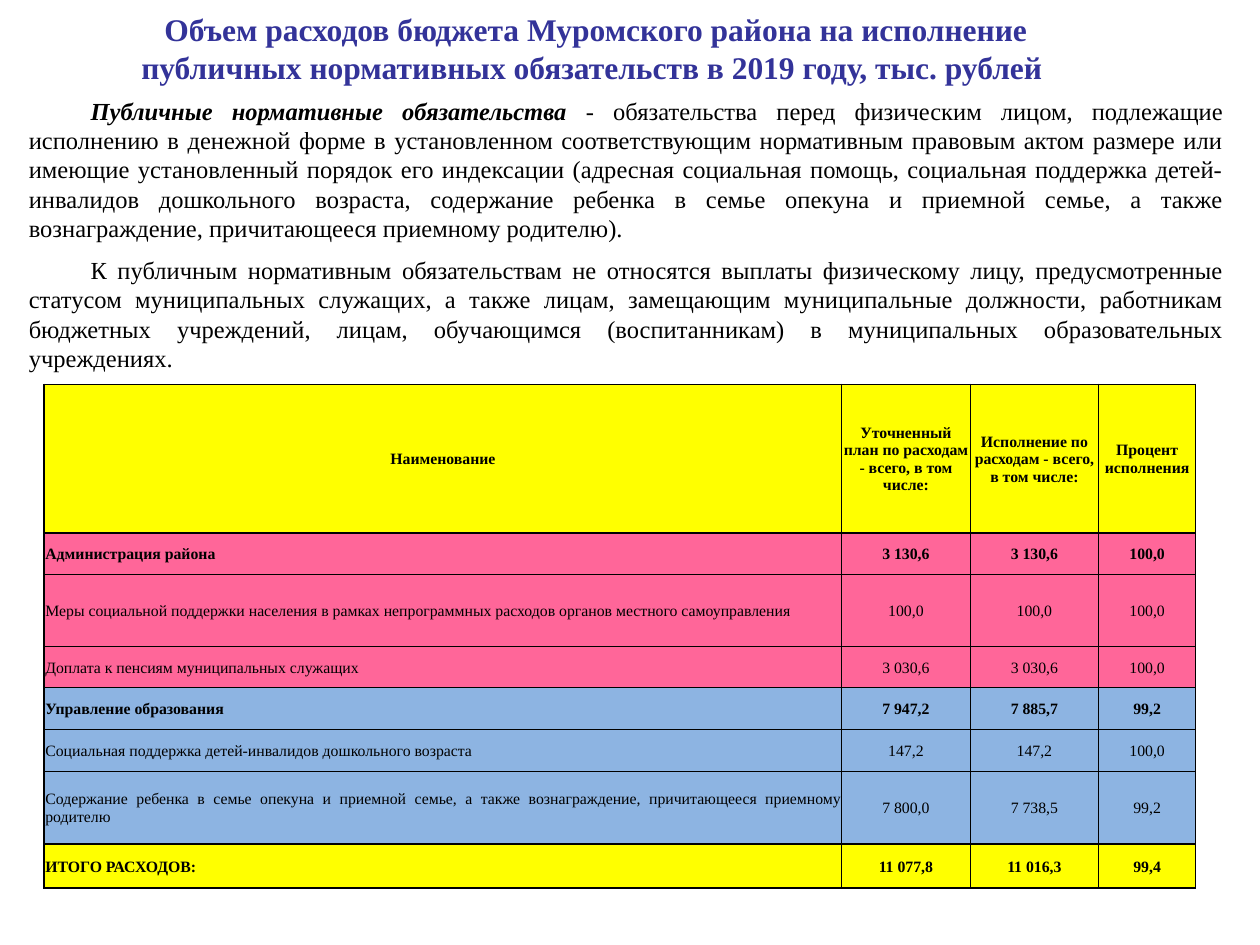
from lxml import etree
from pptx import Presentation
from pptx.dml.color import RGBColor
from pptx.enum.text import MSO_ANCHOR, PP_ALIGN
from pptx.oxml.ns import qn
from pptx.util import Inches, Pt

CENTER, JUSTIFY = PP_ALIGN.CENTER, PP_ALIGN.JUSTIFY
MIDDLE = MSO_ANCHOR.MIDDLE

FONT = "Times New Roman"
BLACK = RGBColor(0x00, 0x00, 0x00)
INDIGO = RGBColor(0x33, 0x33, 0x99)
YELLOW = RGBColor(0xFF, 0xFF, 0x00)
PINK = RGBColor(0xFF, 0x66, 0x99)
BLUE = RGBColor(0x8D, 0xB4, 0xE2)

TITLE = ("Объем расходов бюджета Муромского района на исполнение "
         "публичных нормативных обязательств в 2019 году, тыс. рублей ")
TERM = "Публичные нормативные обязательства"
DEFINITION = (
    " - обязательства перед физическим лицом, подлежащие исполнению в денежной форме "
    "в установленном соответствующим нормативным правовым актом размере или имеющие "
    "установленный порядок его индексации (адресная социальная помощь, социальная "
    "поддержка детей-инвалидов дошкольного возраста, содержание ребенка в семье опекуна "
    "и приемной семье, а также вознаграждение, причитающееся приемному родителю). ")
EXCLUSIONS = (
    "К публичным нормативным обязательствам не относятся выплаты физическому лицу, "
    "предусмотренные статусом муниципальных служащих, а также лицам, замещающим "
    "муниципальные должности, работникам бюджетных учреждений, лицам, обучающимся "
    "(воспитанникам) в муниципальных образовательных учреждениях.")

# Height in inches, fill, bold, cell texts
ROWS = [
    (1.18, YELLOW, True, ("Наименование", "Уточненный план по расходам - всего, в том числе:",
                          "Исполнение по расходам - всего, в том числе:",
                          "Процент исполнения")),
    (0.33, PINK, True, ("Администрация района", "3 130,6", "3 130,6", "100,0")),
    (0.57, PINK, False, ("Меры социальной поддержки населения в рамках непрограммных "
                         "расходов органов местного самоуправления",
                         "100,0", "100,0", "100,0")),
    (0.33, PINK, False, ("Доплата к пенсиям муниципальных служащих",
                         "3 030,6", "3 030,6", "100,0")),
    (0.33, BLUE, True, ("Управление образования", "7 947,2", "7 885,7", "99,2")),
    (0.33, BLUE, False, ("Социальная поддержка детей-инвалидов дошкольного возраста",
                         "147,2", "147,2", "100,0")),
    (0.58, BLUE, False, ("Содержание ребенка в семье опекуна и приемной семье, а также "
                         "вознаграждение, причитающееся приемному родителю",
                         "7 800,0", "7 738,5", "99,2")),
    (0.35, YELLOW, True, ("ИТОГО РАСХОДОВ:", "11 077,8", "11 016,3", "99,4")),
]
COLUMN_WIDTHS = (6.33, 1.02, 1.02, 0.77)

# Widths in points of the grid lines, left to right and top to bottom
VERTICAL_LINES = (1, 1, 0.5, 0.5, 1)
HORIZONTAL_LINES = (1, 1, 0.5, 0.5, 0.5, 0.5, 0.5, 1, 1)


def add_run(paragraph, text, size, color=BLACK, bold=False, italic=False, align=None):
    if align is not None:
        paragraph.alignment = align
    run = paragraph.add_run()
    run.text = text
    font = run.font
    font.name, font.size = FONT, Pt(size)
    font.bold, font.italic = bold, italic
    font.color.rgb = color


def add_text_frame(slide, left, top, width, height):
    box = slide.shapes.add_textbox(Inches(left), Inches(top), Inches(width), Inches(height))
    box.text_frame.word_wrap = True
    return box.text_frame


def set_borders(cell, row, column):
    """Draw the four grid lines around a cell, ahead of its fill in the XML."""
    widths = (("a:lnL", VERTICAL_LINES[column]), ("a:lnR", VERTICAL_LINES[column + 1]),
              ("a:lnT", HORIZONTAL_LINES[row]), ("a:lnB", HORIZONTAL_LINES[row + 1]))
    properties = cell._tc.get_or_add_tcPr()
    for position, (tag, width) in enumerate(widths):
        line = etree.Element(qn(tag), w=str(Pt(width)))
        fill = etree.SubElement(line, qn("a:solidFill"))
        etree.SubElement(fill, qn("a:srgbClr"), val=str(BLACK))
        properties.insert(position, line)


def add_expense_table(slide, left, top):
    width, height = sum(COLUMN_WIDTHS), sum(row[0] for row in ROWS)
    table = slide.shapes.add_table(len(ROWS), len(COLUMN_WIDTHS), Inches(left), Inches(top),
                                   Inches(width), Inches(height)).table
    table.first_row = table.horz_banding = False
    for column, column_width in enumerate(COLUMN_WIDTHS):
        table.columns[column].width = Inches(column_width)
    for row, (row_height, color, bold, texts) in enumerate(ROWS):
        table.rows[row].height = Inches(row_height)
        for column, text in enumerate(texts):
            cell = table.cell(row, column)
            cell.margin_left = cell.margin_right = cell.margin_top = Inches(0.01)
            cell.margin_bottom = 0
            cell.vertical_anchor = MIDDLE
            cell.fill.solid()
            cell.fill.fore_color.rgb = color
            set_borders(cell, row, column)
            align = JUSTIFY if column == 0 and row > 0 else CENTER
            add_run(cell.text_frame.paragraphs[0], text, 9, bold=bold, align=align)


def main():
    presentation = Presentation()
    presentation.slide_width, presentation.slide_height = Inches(10), Inches(7.5)
    slide = presentation.slides.add_slide(presentation.slide_layouts[6])

    title = add_text_frame(slide, 0.91, 0.03, 7.64, 0.7)
    add_run(title.paragraphs[0], TITLE, 18, color=INDIGO, bold=True, align=CENTER)

    body = add_text_frame(slide, 0.13, 0.71, 9.68, 2.34)
    definition, exclusions = body.paragraphs[0], body.add_paragraph()
    for paragraph in (definition, exclusions):
        paragraph._p.get_or_add_pPr().set("indent", str(Inches(0.49)))
    exclusions.space_before = Pt(7)
    add_run(definition, TERM, 14, bold=True, italic=True, align=JUSTIFY)
    add_run(definition, DEFINITION, 14)
    add_run(exclusions, EXCLUSIONS, 14, align=JUSTIFY)

    add_expense_table(slide, 0.35, 3.05)
    presentation.save("out.pptx")


if __name__ == "__main__":
    main()
